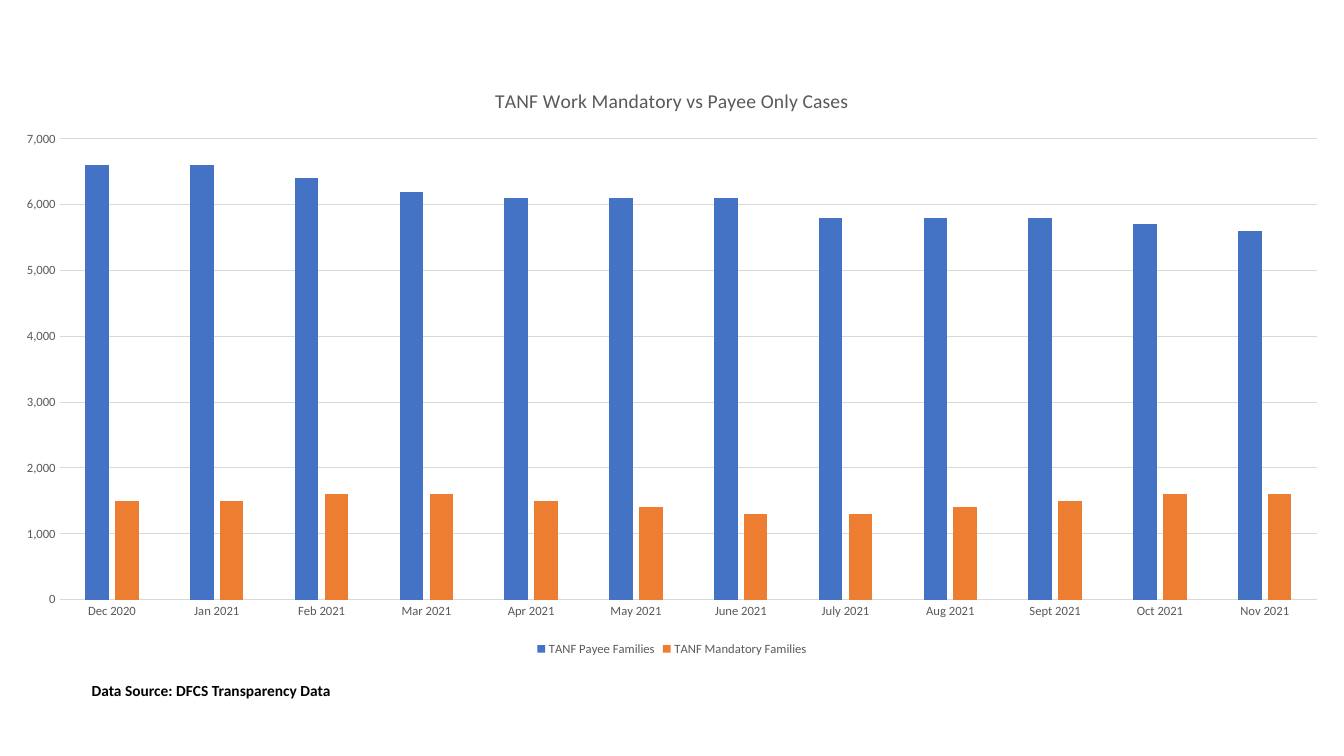
from pptx import Presentation
from pptx import util as u
from pptx.chart import data
from pptx.dml import color
from pptx.enum import chart as ch


def paint(target, hex_color):
    if hasattr(target, "solid"):
        target.solid()
        target = target.fore_color
    target.rgb = color.RGBColor.from_string(hex_color)


def write(tf, content, size, hex_color, bold=False, font="Calibri"):
    p = tf.paragraphs[0]
    r = p.add_run()
    r.text = content
    r.font.name, r.font.size, r.font.bold = font, u.Pt(size), bold
    paint(r.font.color, hex_color)


GRAY, RULE = "595959", "D9D9D9"
months = ["Dec 2020", "Jan 2021", "Feb 2021", "Mar 2021", "Apr 2021", "May 2021",
          "June 2021", "July 2021", "Aug 2021", "Sept 2021", "Oct 2021", "Nov 2021"]
families = [
    ("TANF Payee Families", "4472C4",
     [6600, 6600, 6400, 6200, 6100, 6100, 6100, 5800, 5800, 5800, 5700, 5600]),
    ("TANF Mandatory Families", "ED7D31",
     [1500, 1500, 1600, 1600, 1500, 1400, 1300, 1300, 1400, 1500, 1600, 1600]),
]

prs = Presentation()
prs.slide_width, prs.slide_height = u.Inches(13.33), u.Inches(7.5)
W = prs.slide_width
s = prs.slides.add_slide(prs.slide_layouts[6])

sp = s.shapes.add_textbox(u.Inches(0.81), u.Inches(6.71), W - u.Inches(0.81), u.Inches(0.29))
tf = sp.text_frame
tf.word_wrap = True
write(tf, "Data Source: DFCS Transparency Data", 11, "000000", bold=True)

cd = data.CategoryChartData(number_format="#,##0")
cd.categories = months
for name, fill, values in families:
    cd.add_series(name, values)
chart = s.shapes.add_chart(ch.XL_CHART_TYPE.COLUMN_CLUSTERED, 0, u.Inches(0.66),
                           W, u.Inches(5.89), cd).chart
chart.font.name, chart.font.size = "Calibri", u.Pt(10)
chart.has_title = True
write(chart.chart_title.text_frame, "TANF Work Mandatory vs Payee Only Cases", 14, GRAY)
chart.chart_title.include_in_layout = False

chart.has_legend = True
chart.legend.position = ch.XL_LEGEND_POSITION.BOTTOM
chart.legend.include_in_layout = False

cat, val = chart.category_axis, chart.value_axis
for axis in (cat, val):
    axis.major_tick_mark = axis.minor_tick_mark = ch.XL_TICK_MARK.NONE
for font in (cat.tick_labels.font, val.tick_labels.font, chart.legend.font):
    font.name, font.size = "Calibri", u.Pt(9)
    paint(font.color, GRAY)
val.has_major_gridlines = True
for line in (cat.format.line, val.major_gridlines.format.line):
    paint(line.fill, RULE)
    line.width = u.Pt(0.75)
val.format.line.fill.background()
val.minimum_scale, val.maximum_scale, val.major_unit = 0, 7000, 1000
val.tick_labels.number_format = "#,##0"
val.tick_labels.number_format_is_linked = False

plot = chart.plots[0]
plot.gap_width, plot.overlap, plot.vary_by_categories = 219, -27, False
for series, (name, fill, values) in zip(plot.series, families):
    paint(series.format.fill, fill)

prs.save("out.pptx")
